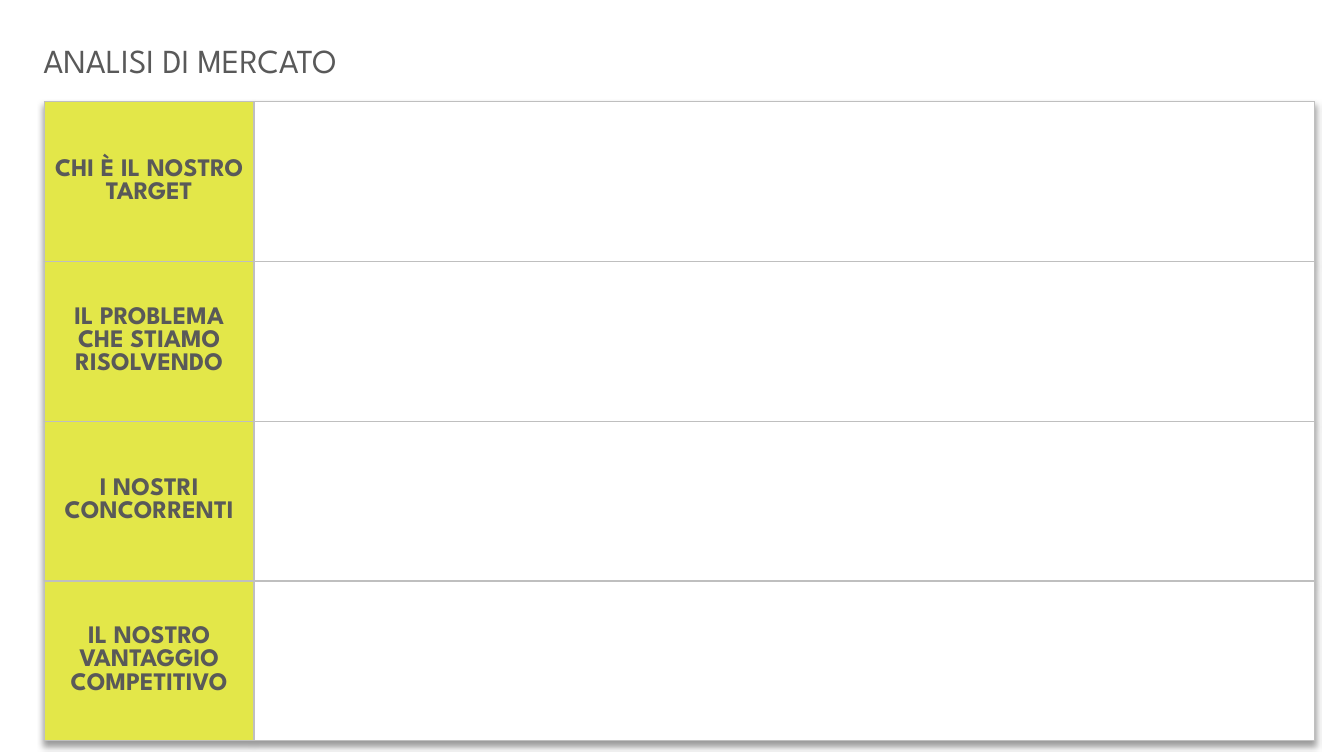
from lxml.etree import SubElement
from pptx import Presentation
from pptx.dml.color import RGBColor
from pptx.enum.text import MSO_ANCHOR, PP_ALIGN
from pptx.oxml import parse_xml
from pptx.oxml.ns import nsdecls, qn
from pptx.util import Inches, Pt

FONT = "League Spartan"
COLORS = {
    "text": "595959",
    "label": "E3E749",
    "answer": "FFFFFF",
    "border": "BFBFBF",
    "shadow": "000000",
}
TOPICS = [
    "CHI È IL NOSTRO TARGET",
    "IL PROBLEMA CHE STIAMO RISOLVENDO",
    "I NOSTRI CONCORRENTI",
    "IL NOSTRO VANTAGGIO COMPETITIVO",
]
LABEL_WIDTH, ANSWER_WIDTH = Inches(2.08), Inches(10.52)
ROW_HEIGHT = Inches(1.585)


def style_text(paragraph, size, bold=False, align=PP_ALIGN.LEFT):
    paragraph.alignment = align
    for run in paragraph.runs:
        run.font.name = FONT
        run.font.size = Pt(size)
        run.font.bold = bold
        run.font.color.rgb = RGBColor.from_string(COLORS["text"])


def add_heading(slide, wording):
    heading = slide.shapes.title
    heading.left, heading.top = Inches(0.33), Inches(0.35)
    heading.width, heading.height = Inches(8.08), Inches(0.5)
    frame = heading.text_frame
    frame.text = wording
    frame.word_wrap = True
    frame.vertical_anchor = MSO_ANCHOR.TOP
    style_text(frame.paragraphs[0], 24)


def fill_cell(cell, color):
    # Borders precede the fill in the cell properties
    properties = cell._tc.get_or_add_tcPr()
    for side in ("a:lnL", "a:lnR", "a:lnT", "a:lnB"):
        line = SubElement(properties, qn(side), w=str(Pt(1)))
        solid = SubElement(line, qn("a:solidFill"))
        SubElement(solid, qn("a:srgbClr"), val=COLORS["border"])
    cell.fill.solid()
    cell.fill.fore_color.rgb = RGBColor.from_string(COLORS[color])


def add_table_shadow(table):
    table._tbl.tblPr.insert(0, parse_xml(
        f'<a:effectLst {nsdecls("a")}>'
        '<a:outerShdw blurRad="50800" dist="38100" dir="5400000" algn="t" rotWithShape="0">'
        f'<a:srgbClr val="{COLORS["shadow"]}"><a:alpha val="40000"/></a:srgbClr>'
        '</a:outerShdw></a:effectLst>'))


def add_market_table(slide):
    table = slide.shapes.add_table(
        len(TOPICS), 2, Inches(0.44), Inches(1.01),
        LABEL_WIDTH + ANSWER_WIDTH, ROW_HEIGHT * len(TOPICS)).table
    table.first_row = table.horz_banding = False
    table.columns[0].width = LABEL_WIDTH
    table.columns[1].width = ANSWER_WIDTH
    add_table_shadow(table)

    for row, topic in zip(table.rows, TOPICS):
        row.height = ROW_HEIGHT
        label, answer = row.cells
        fill_cell(label, "label")
        fill_cell(answer, "answer")
        label.text_frame.text = topic
        label.vertical_anchor = MSO_ANCHOR.MIDDLE
        style_text(label.text_frame.paragraphs[0], 18, True, PP_ALIGN.CENTER)


def main():
    presentation = Presentation()
    presentation.slide_width = Inches(13.33)
    presentation.slide_height = Inches(7.5)
    title_only = presentation.slide_layouts[5]
    slide = presentation.slides.add_slide(title_only)
    add_heading(slide, "ANALISI DI MERCATO")
    add_market_table(slide)
    presentation.save("out.pptx")


if __name__ == "__main__":
    main()
